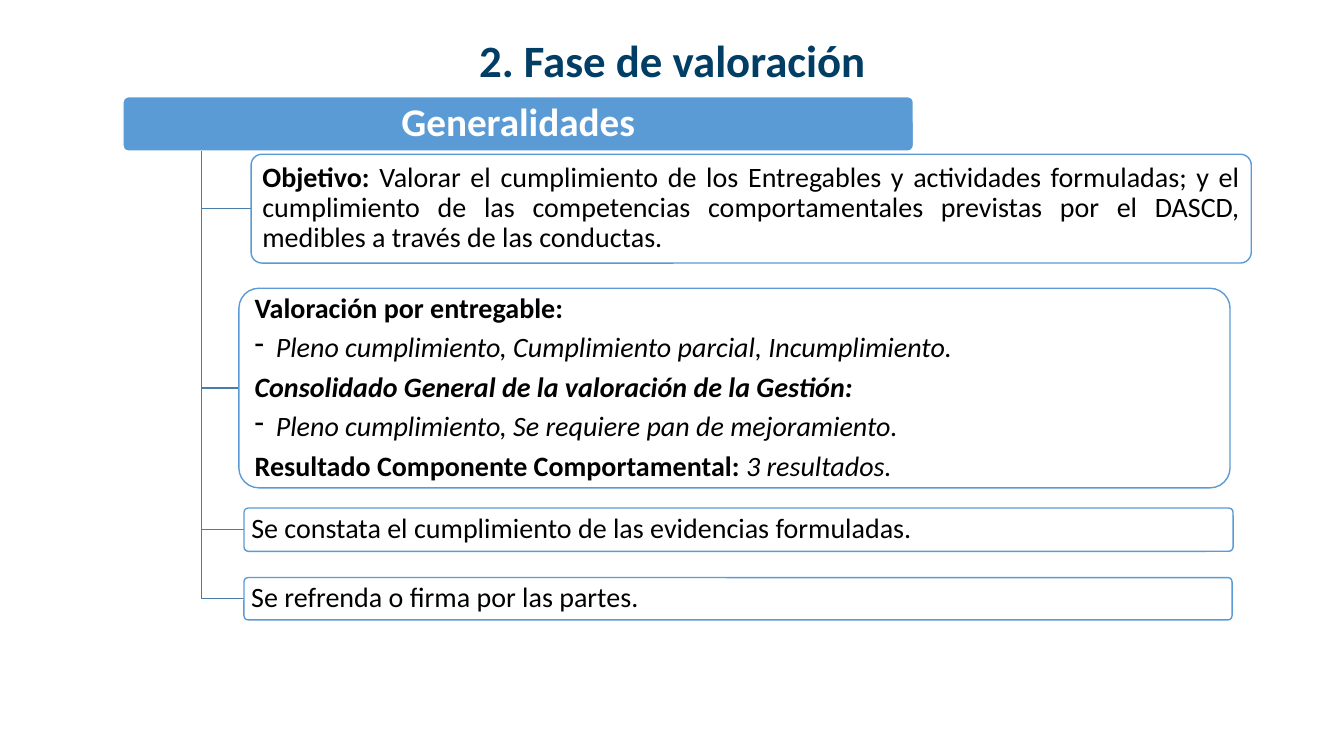
from dataclasses import dataclass

from lxml import etree
from pptx import Presentation
from pptx import util as u
from pptx.dml.color import RGBColor
from pptx.enum import shapes, text
from pptx.oxml import ns


@dataclass(frozen=True)
class Theme:
    font: str = "Calibri"
    title: RGBColor = RGBColor(0x00, 0x3E, 0x65)
    accent: RGBColor = RGBColor(0x5B, 0x9B, 0xD5)
    branch: RGBColor = RGBColor(0x49, 0x7C, 0xAB)
    white: RGBColor = RGBColor(0xFF, 0xFF, 0xFF)
    black: RGBColor = RGBColor(0x00, 0x00, 0x00)
    title_size: int = 32
    header_size: int = 28
    body_size: int = 20
    line_width: float = 1
    leading: float = 0.9
    after_size: float = 0.33


THEME = Theme()
BOLD, ITALIC = "b", "i"
BULLET_INDENT = 0.21
TRUNK_OFFSET = 0.78  # from the left edge of the header

TITLE_BOX = (0.92, 0.28, 11.5, 0.7)
HEADER_BOX = (1.22, 0.96, 7.84, 0.54)

# Each topic: box, text inset, paragraphs as (is bullet, [(words, style), ...])
TOPICS = [
    ((2.49, 1.53, 9.92, 1.08), 0.08, [
        (False, [("Objetivo: ", BOLD),
                 ("Valorar el cumplimiento de los Entregables y actividades "
                  "formuladas; y el cumplimiento de las competencias "
                  "comportamentales previstas por el DASCD, medibles a través "
                  "de las conductas.", "")]),
    ]),
    ((2.37, 2.86, 9.83, 1.98), 0.1, [
        (False, [("Valoración por entregable:", BOLD)]),
        (True, [("Pleno cumplimiento, Cumplimiento parcial, Incumplimiento.", ITALIC)]),
        (False, [("Consolidado General de la valoración de la Gestión:", BOLD + ITALIC)]),
        (True, [("Pleno cumplimiento, Se requiere pan de mejoramiento.", ITALIC)]),
        (False, [("Resultado Componente Comportamental: ", BOLD),
                 ("3 resultados.", ITALIC)]),
    ]),
    ((2.42, 5.04, 9.81, 0.43), 0.06, [
        (False, [("Se constata el cumplimiento de las evidencias formuladas.", "")]),
    ]),
    ((2.42, 5.73, 9.8, 0.42), 0.06, [
        (False, [("Se refrenda o firma por las partes.", "")]),
    ]),
]


def inches(values):
    return [u.Inches(value) for value in values]


def set_frame(frame, inset):
    frame.word_wrap = True
    frame.vertical_anchor = text.MSO_ANCHOR.MIDDLE
    frame.margin_left = frame.margin_right = u.Inches(inset)
    frame.margin_top = frame.margin_bottom = u.Inches(0.03)


def add_dash(para):
    properties = para._p.get_or_add_pPr()
    indent = u.Inches(BULLET_INDENT)
    properties.set("marL", str(indent))
    properties.set("indent", str(-indent))
    etree.SubElement(properties, ns.qn("a:buChar")).set("char", "-")


def style_paragraph(para, size, color, align):
    para.alignment = align
    para.line_spacing = THEME.leading
    para.font.name = THEME.font
    para.font.size = u.Pt(size)
    para.font.color.rgb = color


def write_heading(frame, words, size, color):
    para = frame.paragraphs[0]
    para.text = words
    style_paragraph(para, size, color, text.PP_ALIGN.CENTER)
    para.font.bold = True


def write_topic(frame, paragraphs):
    for index, (is_bullet, spans) in enumerate(paragraphs):
        para = frame.add_paragraph() if index else frame.paragraphs[0]
        if is_bullet:
            add_dash(para)
        style_paragraph(para, THEME.body_size, THEME.black, text.PP_ALIGN.JUSTIFY)
        para.space_after = u.Pt(THEME.body_size * THEME.after_size)
        styles = {style for _, style in spans}
        if len(styles) == 1:
            set_style(para.font, spans[0][1])
        for words, style in spans:
            span = para.add_run()
            span.text = words
            if len(styles) > 1:
                set_style(span.font, style)


def set_style(font, style):
    font.bold = BOLD in style
    font.italic = ITALIC in style


def add_rounded_box(slide, box, fill, line):
    shape = slide.shapes.add_shape(shapes.MSO_SHAPE.ROUNDED_RECTANGLE, *inches(box))
    shape.adjustments[0] = 0.1
    shape.shadow.inherit = False
    shape.fill.solid()
    shape.fill.fore_color.rgb = fill
    shape.line.color.rgb = line
    shape.line.width = u.Pt(THEME.line_width)
    return shape


def add_title(slide, box):
    frame = slide.shapes.add_textbox(*inches(box)).text_frame
    set_frame(frame, 0.1)
    write_heading(frame, "2. Fase de valoración", THEME.title_size, THEME.title)


def add_header(slide, box):
    frame = add_rounded_box(slide, box, THEME.accent, THEME.white).text_frame
    set_frame(frame, 0.06)
    write_heading(frame, "Generalidades", THEME.header_size, THEME.white)


def add_branch(slide, header, box):
    """Draw the elbow from under the header to the left side of the box."""
    trunk, start = header[0] + TRUNK_OFFSET, header[1] + header[3]
    middle = box[1] + box[3] / 2
    builder = slide.shapes.build_freeform(*inches((trunk, start)))
    corners = [inches((trunk, middle)), inches((box[0], middle))]
    builder.add_line_segments(corners, close=False)
    branch = builder.convert_to_shape()
    branch.shadow.inherit = False
    branch.fill.background()
    branch.line.color.rgb = THEME.branch
    branch.line.width = u.Pt(THEME.line_width)


def add_topic(slide, header, box, inset, paragraphs):
    add_branch(slide, header, box)
    frame = add_rounded_box(slide, box, THEME.white, THEME.accent).text_frame
    set_frame(frame, inset)
    write_topic(frame, paragraphs)


def main():
    deck = Presentation()
    deck.slide_width, deck.slide_height = inches((13.33, 7.5))
    slide = deck.slides.add_slide(deck.slide_layouts[6])
    add_title(slide, TITLE_BOX)
    add_header(slide, HEADER_BOX)
    for box, inset, paragraphs in TOPICS:
        add_topic(slide, HEADER_BOX, box, inset, paragraphs)
    deck.save("out.pptx")


if __name__ == "__main__":
    main()
